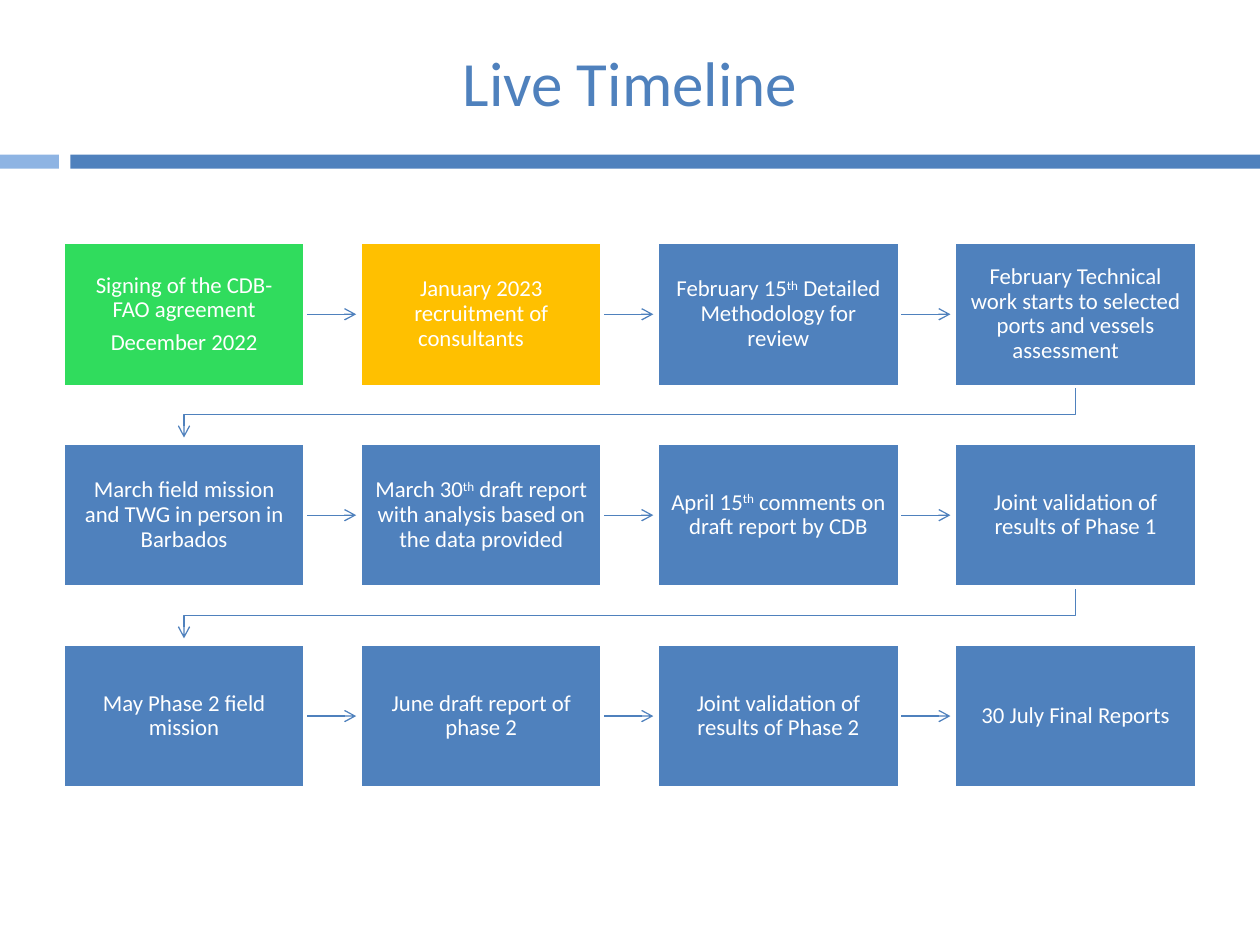
import pptx
import pptx.dml.color
import pptx.enum.shapes
import pptx.enum.text
import pptx.util
from lxml import etree
from pptx.oxml.ns import qn

Cm = pptx.util.Cm
Pt = pptx.util.Pt
RGB = pptx.dml.color.RGBColor

BLUE = RGB(0x4F, 0x81, 0xBD)
PALE = RGB(0x8E, 0xB4, 0xE3)
GREEN = RGB(0x30, 0xDC, 0x5D)
AMBER = RGB(0xFF, 0xC0, 0x00)
WHITE = RGB(0xFF, 0xFF, 0xFF)

LEFT, TOP = 1.27, 4.88
WIDE, HIGH = 4.88, 2.91
STEP, DROP = 5.99, 4.05
REACH = 1.03

# Text between carets is raised; each string is one paragraph.
ROWS = [
    [
        (GREEN, ["Signing of the CDB- FAO agreement", "December 2022"]),
        (AMBER, ["January 2023 recruitment of consultants\t"]),
        (BLUE, ["February 15^th^ Detailed Methodology for review"]),
        (BLUE, ["February Technical work starts to selected ports "
                "and vessels assessment\t"]),
    ],
    [
        (BLUE, ["March field mission and TWG in person in Barbados"]),
        (BLUE, ["March 30^th^ draft report with analysis based on "
                "the data provided"]),
        (BLUE, ["April 15^th^ comments on draft report by CDB"]),
        (BLUE, ["Joint validation of results of Phase 1"]),
    ],
    [
        (BLUE, ["May Phase 2 field mission"]),
        (BLUE, ["June draft report of phase 2"]),
        (BLUE, ["Joint validation of results of Phase 2"]),
        (BLUE, ["30 July Final Reports"]),
    ],
]


class Deck:
    font = "Calibri"

    def __init__(self, slide):
        self.slide = slide
        self.shapes = slide.shapes

    def add_runs(self, para, text, size, color):
        """Add runs to a paragraph, raising the parts between carets."""
        para.alignment = pptx.enum.text.PP_ALIGN.CENTER
        for i, part in enumerate(text.split("^")):
            run = para.add_run()
            run.text = part
            run.font.name = self.font
            run.font.size = Pt(size)
            run.font.color.rgb = color
            if i % 2:
                run.font._element.set("baseline", "30000")

    def title(self, text):
        box = self.shapes.add_textbox(Cm(1.27), Cm(0.33), Cm(22.86), Cm(2.6))
        frame = box.text_frame
        frame.word_wrap = True
        frame.vertical_anchor = pptx.enum.text.MSO_ANCHOR.MIDDLE
        self.add_runs(frame.paragraphs[0], text, 36, BLUE)

    def bar(self, x, y, w, h, color):
        kind = pptx.enum.shapes.MSO_SHAPE.RECTANGLE
        shape = self.shapes.add_shape(kind, Cm(x), Cm(y), Cm(w), Cm(h))
        shape.shadow.inherit = False
        shape.fill.solid()
        shape.fill.fore_color.rgb = color
        shape.line.fill.background()
        return shape

    def card(self, x, y, color, lines):
        shape = self.bar(x, y, WIDE, HIGH, color)
        shape.line.color.rgb = WHITE
        shape.line.width = Pt(2)
        frame = shape.text_frame
        frame.word_wrap = True
        frame.vertical_anchor = pptx.enum.text.MSO_ANCHOR.MIDDLE
        frame.margin_left = frame.margin_right = Cm(0.25)
        frame.margin_top = frame.margin_bottom = Cm(0.25)
        for i, text in enumerate(lines):
            para = frame.add_paragraph() if i else frame.paragraphs[0]
            para.line_spacing = 0.9
            para.space_after = Pt(4.55)
            self.add_runs(para, text, 13, WHITE)

    def tip(self, shape):
        """Style a line and give its end an open arrowhead."""
        shape.line.color.rgb = BLUE
        shape.line.width = Pt(0.75)
        line = shape._element.spPr.find(qn("a:ln"))
        etree.SubElement(line, qn("a:tailEnd"), type="arrow")

    def arrow(self, x, y):
        kind = pptx.enum.shapes.MSO_CONNECTOR.STRAIGHT
        link = self.shapes.add_connector(
            kind, Cm(x), Cm(y), Cm(x + REACH), Cm(y))
        self.tip(link)
        etree.SubElement(link._element.spPr, qn("a:effectLst"))

    def turn(self, start, end, y):
        """Lead from the end of one row to the start of the next."""
        build = self.shapes.build_freeform(Cm(start), Cm(y))
        bend = y + 0.57
        points = [(start, bend), (end, bend), (end, y + REACH)]
        build.add_line_segments([(Cm(a), Cm(b)) for a, b in points],
                                close=False)
        shape = build.convert_to_shape()
        shape.fill.background()
        self.tip(shape)
        shape.shadow.inherit = False


def main():
    prs = pptx.Presentation()
    prs.slide_width, prs.slide_height = Cm(25.4), Cm(19.05)
    deck = Deck(prs.slides.add_slide(prs.slide_layouts[6]))
    deck.bar(1.42, 3.12, 23.98, 0.28, BLUE)
    deck.bar(0, 3.12, 1.19, 0.28, PALE)
    deck.title("Live Timeline")
    for r, row in enumerate(ROWS):
        y = TOP + r * DROP
        for c, (color, lines) in enumerate(row):
            x = LEFT + c * STEP
            if c < len(row) - 1:
                deck.arrow(x + WIDE, y + HIGH / 2)
            elif r < len(ROWS) - 1:
                deck.turn(x + WIDE / 2, LEFT + WIDE / 2, y + HIGH)
            deck.card(x, y, color, lines)
    prs.save("out.pptx")


if __name__ == "__main__":
    main()
